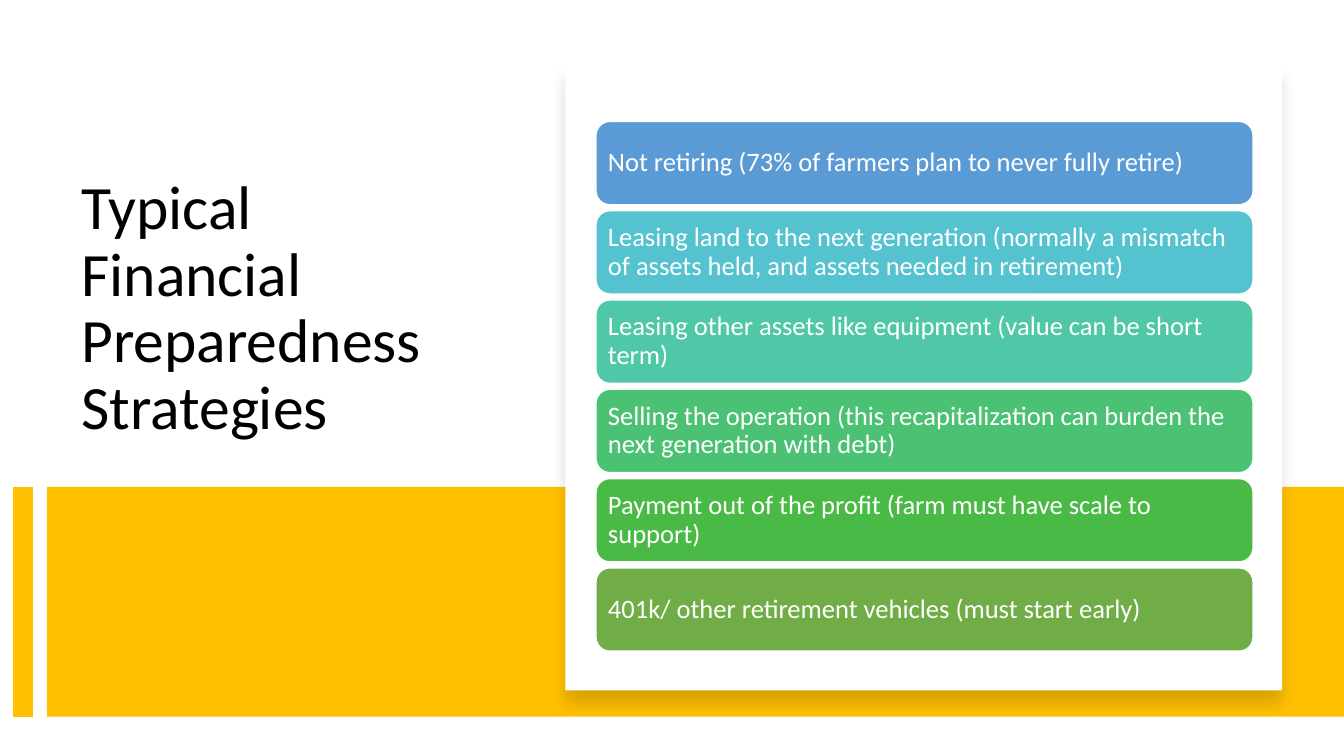
from dataclasses import dataclass

from lxml import etree
from pptx import Presentation
from pptx.dml.color import RGBColor
from pptx.enum.shapes import MSO_CONNECTOR, MSO_SHAPE
from pptx.enum.text import MSO_ANCHOR, PP_ALIGN
from pptx.oxml.ns import qn
from pptx.util import Cm, Pt


@dataclass(frozen=True)
class Theme:
    font: str = "Calibri"
    title_size: float = 44
    strategy_size: float = 19
    line_spacing: float = 0.9
    ink: str = "000000"
    paper: str = "FFFFFF"
    accent: str = "FFC000"
    strategy_fills: tuple = ("5B9BD5", "55C3CF", "50C8A7", "4BC174", "4ABA46", "70AD47")


STRATEGIES = (
    "Not retiring (73% of farmers plan to never fully retire)",
    "Leasing land to the next generation (normally a mismatch of assets held, "
    "and assets needed in retirement)",
    "Leasing other assets like equipment (value can be short term)",
    "Selling the operation (this recapitalization can burden the next generation with debt)",
    "Payment out of the profit (farm must have scale to support)",
    "401k/ other retirement vehicles (must start early)",
)
STRATEGY_TOP, STRATEGY_PITCH = 3.06, 2.25


class SlideBuilder:
    """Draws themed elements on one slide; lengths are in centimetres."""

    def __init__(self, slide, theme):
        self.slide = slide
        self.theme = theme

    def fill_text(self, frame, text, size, color, inset):
        margins = {f"margin_{side}": Cm(inset) for side in ("left", "top", "right", "bottom")}
        frame_format = {"word_wrap": True, "vertical_anchor": MSO_ANCHOR.MIDDLE, **margins}
        for name, value in frame_format.items():
            setattr(frame, name, value)
        paragraph = frame.paragraphs[0]
        paragraph.text = text
        paragraph.alignment = PP_ALIGN.LEFT
        paragraph.line_spacing = self.theme.line_spacing
        for name, value in {"name": self.theme.font, "size": Pt(size)}.items():
            setattr(paragraph.font, name, value)
        paragraph.font.color.rgb = RGBColor.from_string(color)

    def title(self, text, *bounds):
        box = self.slide.shapes.add_textbox(*map(Cm, bounds))
        self.fill_text(box.text_frame, text, self.theme.title_size, self.theme.ink, inset=0.25)

    def block(self, fill, *bounds, kind=MSO_SHAPE.RECTANGLE):
        block = self.slide.shapes.add_shape(kind, *map(Cm, bounds))
        block.shadow.inherit = False
        block.fill.solid()
        block.fill.fore_color.rgb = RGBColor.from_string(fill)
        block.line.fill.background()
        return block

    def stripe(self, x, top, bottom):
        stripe = self.slide.shapes.add_connector(
            MSO_CONNECTOR.STRAIGHT, Cm(x), Cm(top), Cm(x), Cm(bottom))
        stripe.line.width = Pt(14)
        stripe.line.color.rgb = RGBColor.from_string(self.theme.accent)
        etree.SubElement(stripe._element.spPr, qn("a:effectLst"))

    def card(self, *bounds):
        """Draw a paper panel with a soft shadow below it."""
        card = self.block(self.theme.paper, *bounds)
        effects = card._element.spPr.find(qn("a:effectLst"))
        shadow = etree.SubElement(
            effects, qn("a:outerShdw"), blurRad=str(Pt(11)), dist=str(Pt(10)),
            dir="5400000", algn="t", rotWithShape="0")
        color = etree.SubElement(shadow, qn("a:srgbClr"), val=self.theme.ink)
        etree.SubElement(color, qn("a:alpha"), val="15000")

    def strategy(self, text, fill, *bounds):
        bar = self.block(fill, *bounds, kind=MSO_SHAPE.ROUNDED_RECTANGLE)
        bar.line.width = Pt(1)
        bar.line.color.rgb = RGBColor.from_string(self.theme.paper)
        self.fill_text(bar.text_frame, text, self.theme.strategy_size, self.theme.paper, inset=0.2)


def main():
    deck = Presentation()
    deck.slide_width, deck.slide_height = Cm(33.87), Cm(19.05)
    theme = Theme()
    builder = SlideBuilder(deck.slides.add_slide(deck.slide_layouts[6]), theme)

    builder.title("Typical Financial Preparedness Strategies", 1.8, 4.06, 10.5, 7.47)
    builder.block(theme.accent, 1.18, 12.27, 32.69, 5.79)
    builder.stripe(0.58, 12.27, 18.06)
    builder.card(14.25, 1.63, 18.06, 15.77)
    for row, (text, fill) in enumerate(zip(STRATEGIES, theme.strategy_fills)):
        top = STRATEGY_TOP + row * STRATEGY_PITCH
        builder.strategy(text, fill, 15.02, top, 16.56, 2.1)

    deck.save("out.pptx")


if __name__ == "__main__":
    main()
